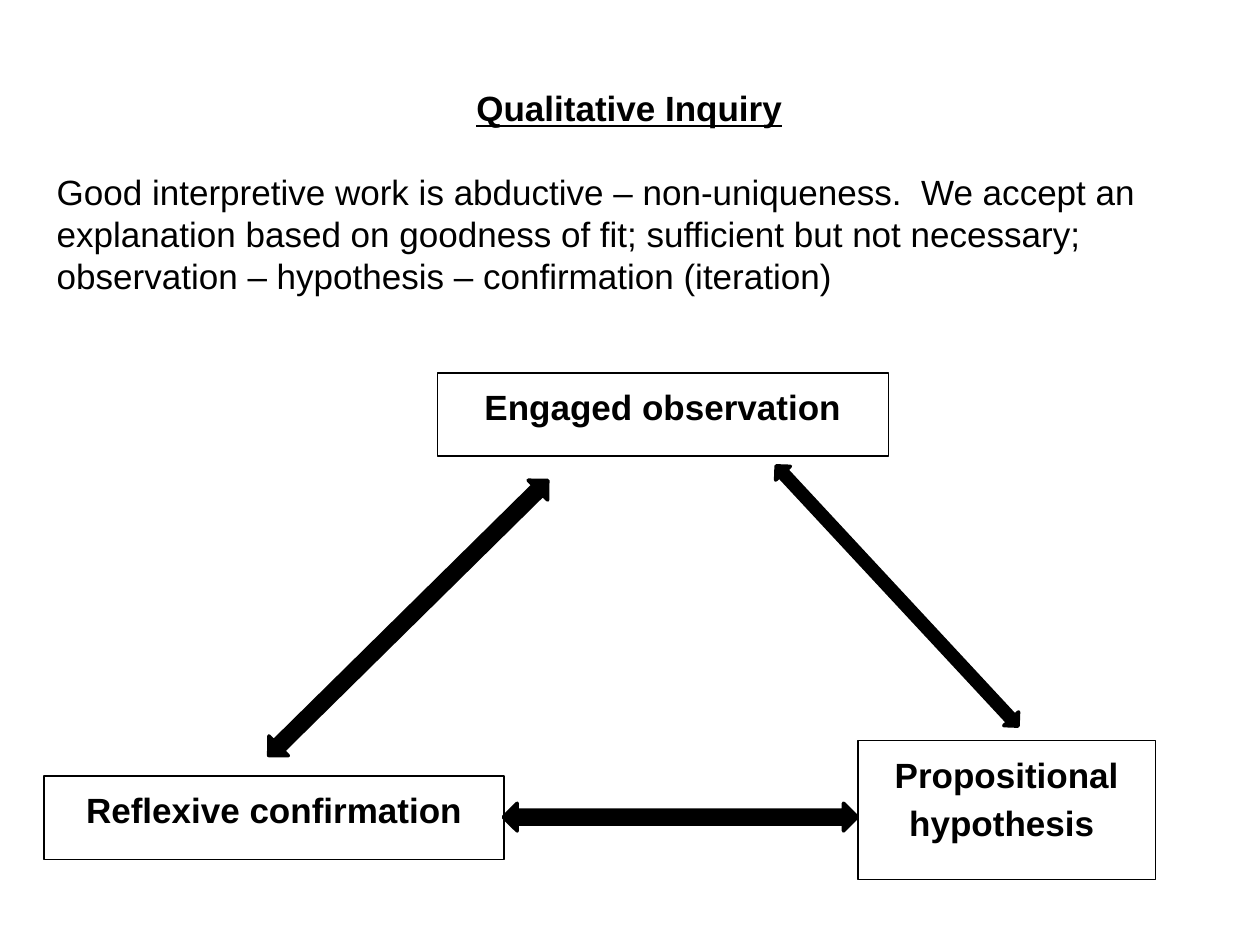
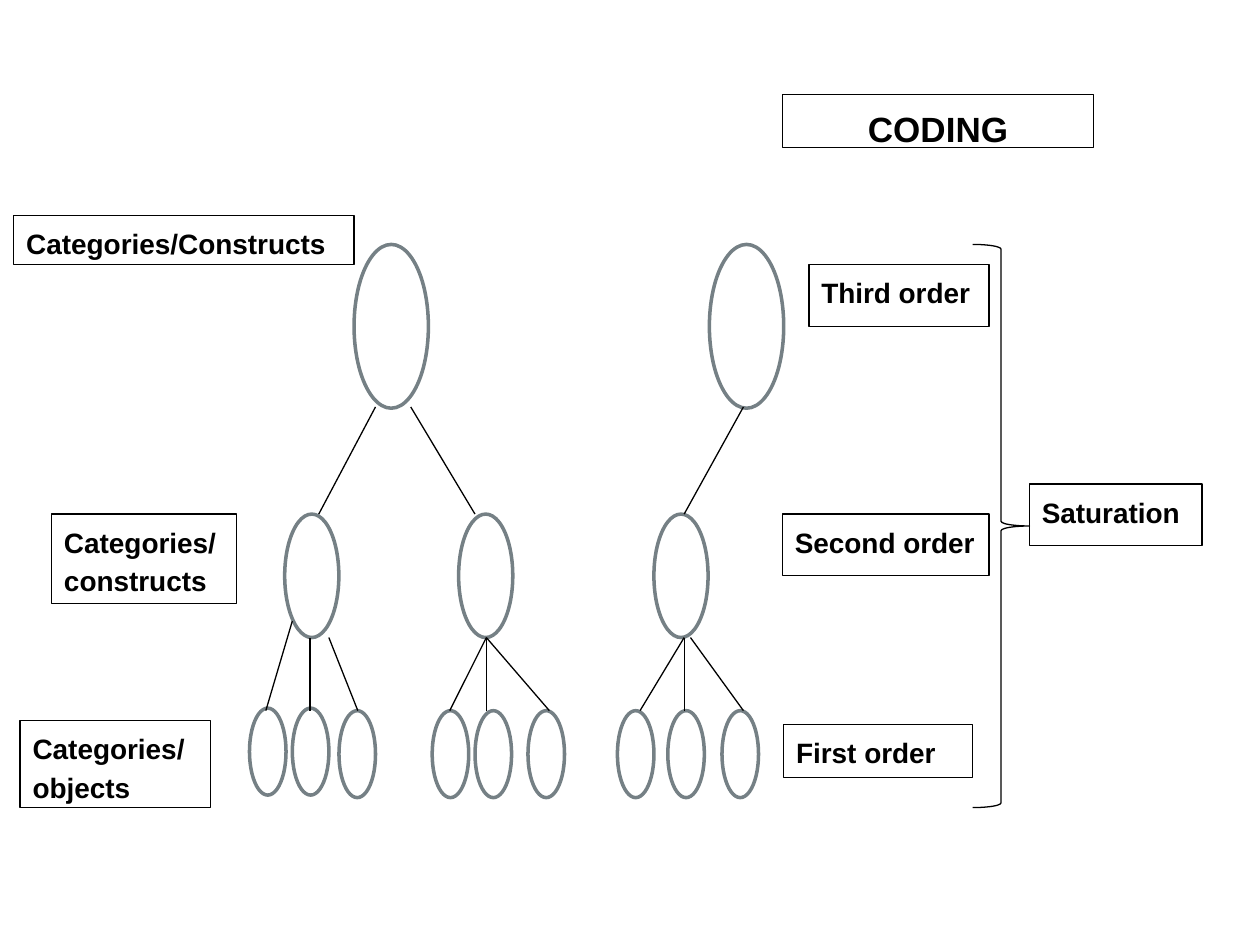
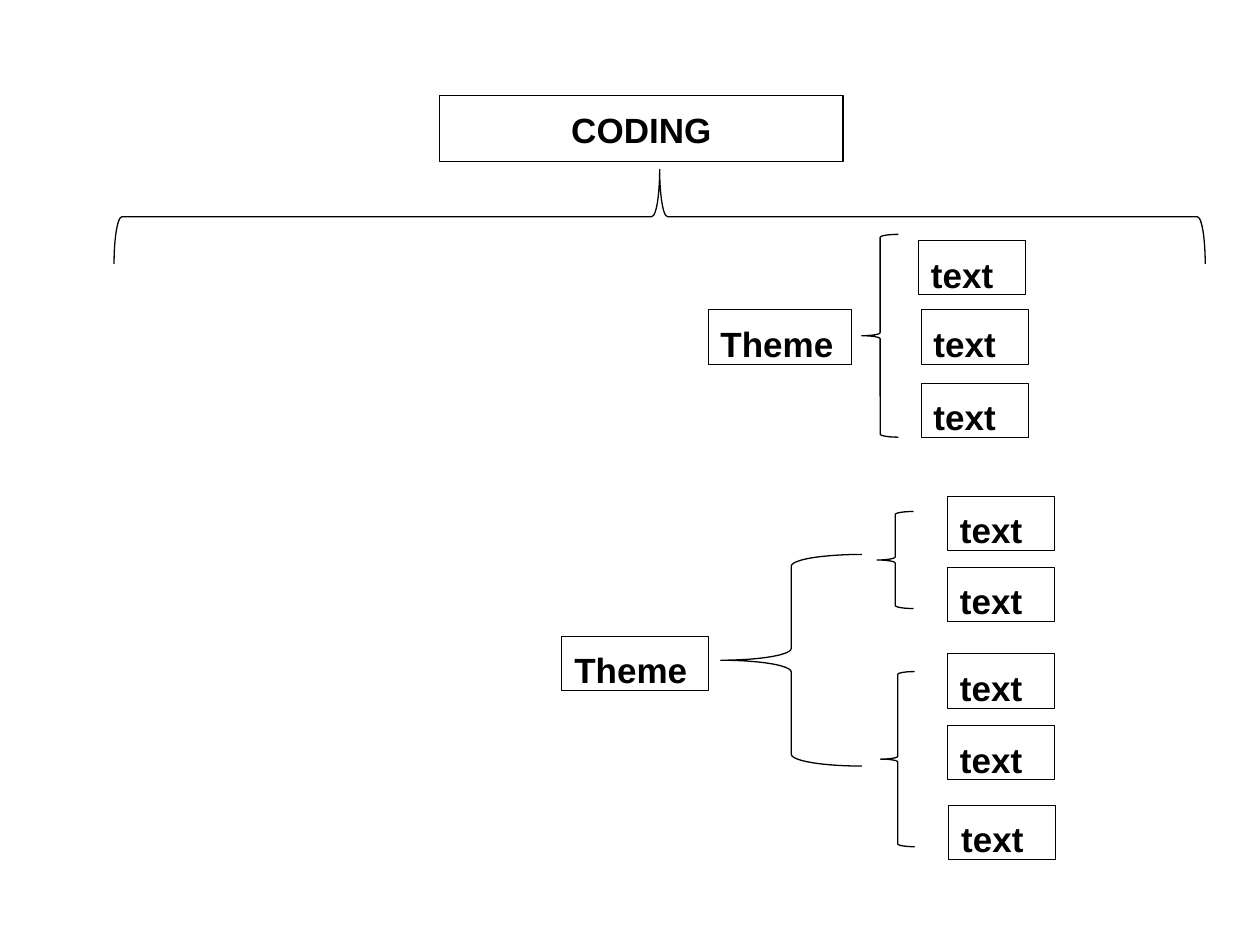
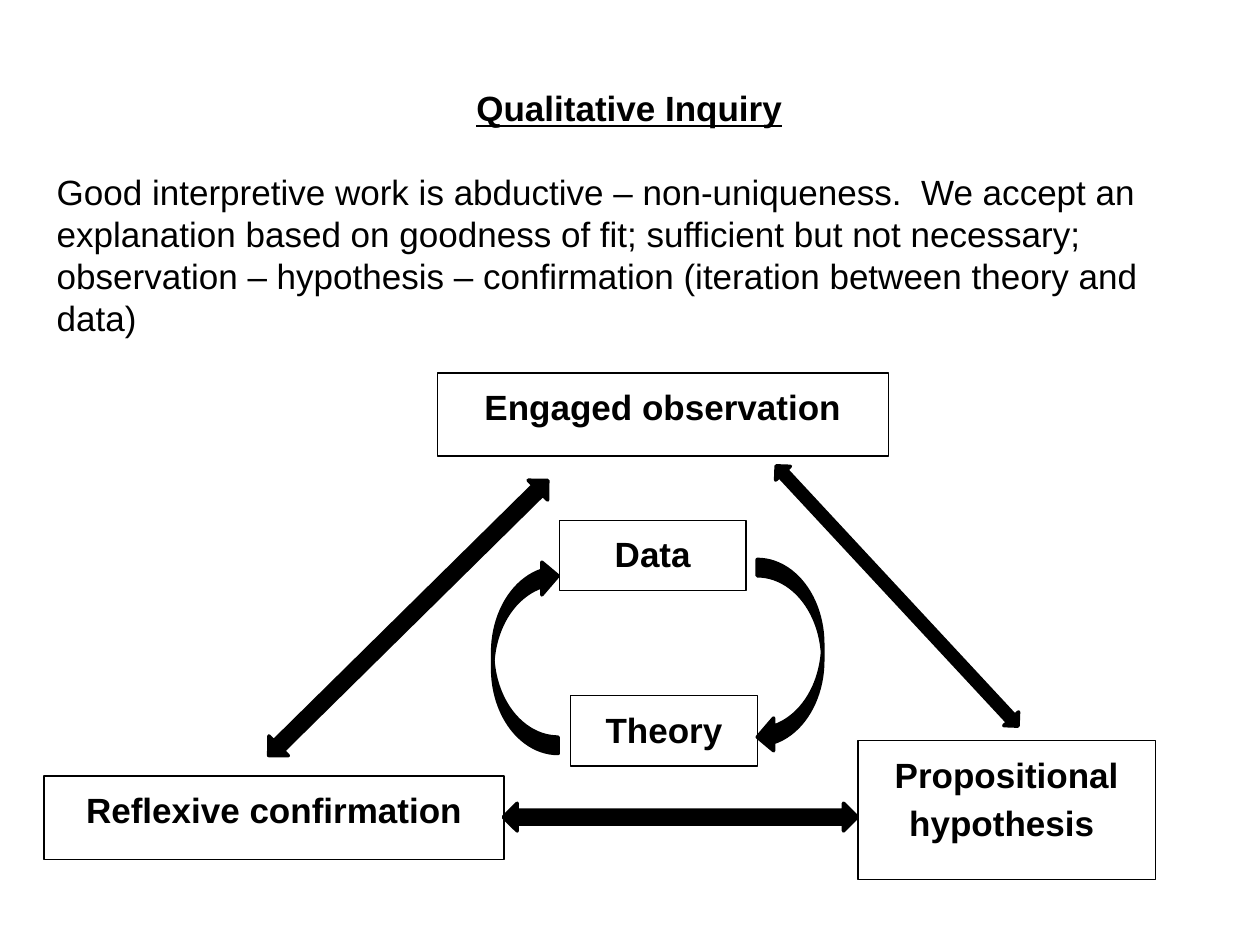
from lxml import etree
from pptx import Presentation
from pptx import util as u
from pptx.dml import color
from pptx.enum import shapes, text
from pptx.oxml import ns

FONT = "Arial"
COLORS = {"ink": "000000", "paper": "FFFFFF", "oval": "758085"}
KIND = shapes.MSO_SHAPE
LEFT, CENTER = text.PP_ALIGN.LEFT, text.PP_ALIGN.CENTER

HEADING = "Qualitative Inquiry"
CLAIM = ("Good interpretive work is abductive – non-uniqueness.  We accept an explanation "
         "based on goodness of fit; sufficient but not necessary; "
         "observation – hypothesis – confirmation ({})")
CYCLE_BOXES = [
    ("Engaged observation", (3.47, 2.96, 3.58, 0.66)),
    ("Propositional hypothesis ", (6.81, 5.88, 2.36, 1.1)),
    ("Reflexive confirmation", (0.35, 6.16, 3.65, 0.66)),
]
CYCLE_ARROWS = [
    (KIND.UP_DOWN_ARROW, (3.13, 3.35, 0.22, 3.11), 45.4),
    (KIND.UP_DOWN_ARROW, (5.29, 5.08, 0.22, 2.81), 270),
    (KIND.UP_DOWN_ARROW, (7.04, 3.32, 0.16, 2.82), 317.1),
]
LOOP_BOXES = [
    ("Theory", (4.53, 5.52, 1.48, 0.56)),
    ("Data", (4.44, 4.13, 1.48, 0.56)),
]
LOOP_ARROWS = [
    (KIND.CURVED_LEFT_ARROW, (6.01, 4.44, 0.52, 1.54), 0),
    (KIND.CURVED_LEFT_ARROW, (3.91, 4.44, 0.52, 1.54), 180),
]

OVAL_LEVELS = [
    (0.59, 1.3, [(2.81, 1.94), (5.63, 1.94)]),
    (0.43, 0.98, [(2.26, 4.08), (3.64, 4.08), (5.19, 4.08)]),
    (0.29, 0.69, [(1.98, 5.62), (2.32, 5.62), (2.69, 5.64),
                  (3.43, 5.64), (3.77, 5.64), (4.19, 5.64),
                  (4.9, 5.64), (5.3, 5.64), (5.73, 5.64)]),
]
BRANCH_LEVELS = [
    (4.08, 3.23, [(2.53, 2.98), (3.77, 3.26), (5.43, 5.9)]),
    (5.64, 5.06, [(2.46, 2.46), (2.84, 2.61), (3.57, 3.86), (3.86, 3.86),
                  (4.36, 3.86), (5.08, 5.43), (5.43, 5.43), (5.9, 5.48)]),
    (5.64, 4.93, [(2.11, 2.32)]),
]
ORDER_LABELS = [
    ("Categories/\nobjects", (0.16, 5.72, 1.51, 0.69)),
    ("Categories/\nconstructs", (0.41, 4.08, 1.47, 0.71)),
    ("Categories/Constructs", (0.11, 1.71, 2.7, 0.39)),
    ("First order", (6.22, 5.75, 1.5, 0.42)),
    ("Second order", (6.21, 4.08, 1.64, 0.49)),
    ("Third order", (6.42, 2.1, 1.43, 0.49)),
    ("Saturation", (8.17, 3.84, 1.37, 0.49)),
]

THEMES = [(5.62, 2.46, 1.14), (4.46, 5.05, 1.16)]
TEXTS = [(7.29, 1.91), (7.31, 2.46), (7.31, 3.04), (7.52, 3.94),
         (7.52, 4.5), (7.52, 5.19), (7.52, 5.76), (7.53, 6.39)]
TEXT_W, THEME_H = 0.85, 0.43
THEME_BRACES = [
    ((6.84, 1.86, 0.29, 1.61), 0),
    ((6.96, 4.06, 0.29, 0.77), 0),
    ((6.99, 5.33, 0.27, 1.39), 0),
    ((5.72, 4.4, 1.12, 1.68), 0),
    ((4.86, -2.61, 0.75, 8.66), 90),
]


def rgb(name):
    return color.RGBColor.from_string(COLORS[name])


def inches(values):
    return [u.Inches(v) for v in values]


def paint(sp, fill, line, weight):
    if fill:
        sp.fill.solid()
        sp.fill.fore_color.rgb = rgb(fill)
    else:
        sp.fill.background()
    sp.line.color.rgb = rgb(line)
    sp.line.width = u.Pt(weight)


def draw(s, kind, at, fill="paper", line="ink", weight=0.75, turn=0):
    sp = s.shapes.add_shape(kind, *inches(at))
    sp.shadow.inherit = False
    sp.rotation = turn
    paint(sp, fill, line, weight)
    return sp


def write(sp, words, size=20, align=CENTER, bold=True, underline=False, spacing=1.15):
    tf = sp.text_frame
    tf.word_wrap = True
    tf.auto_size = text.MSO_AUTO_SIZE.NONE
    tf.vertical_anchor = text.MSO_ANCHOR.TOP
    for i, line in enumerate(words.split("\n")):
        p = tf.add_paragraph() if i else tf.paragraphs[0]
        p.alignment = align
        p.line_spacing = spacing
        p.space_before = p.space_after = u.Pt(0)
        r = p.add_run()
        r.text = line
        r.font.name = FONT
        r.font.size = u.Pt(size)
        r.font.bold = bold
        r.font.underline = underline
        r.font.color.rgb = rgb("ink")


def box(s, words, at, size=20, align=CENTER, weight=0.75):
    write(draw(s, KIND.RECTANGLE, at, weight=weight), words, size, align)


def place(sp, at):
    sp.left, sp.top, sp.width, sp.height = inches(at)
    return sp


def branch(s, start, end):
    line = s.shapes.add_connector(shapes.MSO_CONNECTOR.STRAIGHT, *inches(start + end))
    line.line.color.rgb = rgb("ink")
    line.line.width = u.Pt(0.75)
    etree.SubElement(line._element.spPr, ns.qn("a:effectLst"))


def inquiry_slide(prs, iteration, boxes, arrows):
    s = prs.slides.add_slide(prs.slide_layouts[0])
    title = place(s.shapes.title, (0.35, 0.64, 9.29, 0.42))
    write(title, HEADING, underline=True, spacing=1.0)
    body = place(s.placeholders[1], (0.35, 1.3, 9.29, 1.5))
    write(body, CLAIM.format(iteration), align=LEFT, bold=False, spacing=1.0)
    for words, at in boxes:
        box(s, words, at)
    for kind, at, turn in arrows:
        draw(s, kind, at, fill="ink", weight=2, turn=turn)


def coding_slide(prs, at):
    s = prs.slides.add_slide(prs.slide_layouts[5])
    title = place(s.shapes.title, at)
    paint(title, "paper", "ink", 0.75)
    write(title, "CODING")
    return s


def orders_slide(prs):
    s = coding_slide(prs, (6.21, 0.75, 2.47, 0.42))
    for w, h, spots in OVAL_LEVELS:
        for x, y in spots:
            draw(s, KIND.OVAL, (x, y, w, h), line="oval", weight=2)
    for low, high, pairs in BRANCH_LEVELS:
        for x1, x2 in pairs:
            branch(s, (x1, low), (x2, high))
    for words, at in ORDER_LABELS:
        box(s, words, at, 16, LEFT)
    draw(s, KIND.RIGHT_BRACE, (7.72, 1.94, 0.45, 4.47), fill=None)


def themes_slide(prs):
    s = coding_slide(prs, (3.49, 0.76, 3.2, 0.52))
    for at, turn in THEME_BRACES:
        draw(s, KIND.LEFT_BRACE, at, fill=None, turn=turn)
    for x, y, w in THEMES:
        box(s, "Theme", (x, y, w, THEME_H), align=LEFT, weight=0.5)
    for x, y in TEXTS:
        box(s, "text", (x, y, TEXT_W, THEME_H), align=LEFT, weight=0.5)


def main():
    prs = Presentation()
    prs.slide_width, prs.slide_height = u.Inches(10), u.Inches(7.5)
    inquiry_slide(prs, "iteration", CYCLE_BOXES, CYCLE_ARROWS)
    orders_slide(prs)
    themes_slide(prs)
    inquiry_slide(prs, "iteration between theory and data",
                  CYCLE_BOXES + LOOP_BOXES, CYCLE_ARROWS + LOOP_ARROWS)
    prs.save("out.pptx")


if __name__ == "__main__":
    main()
